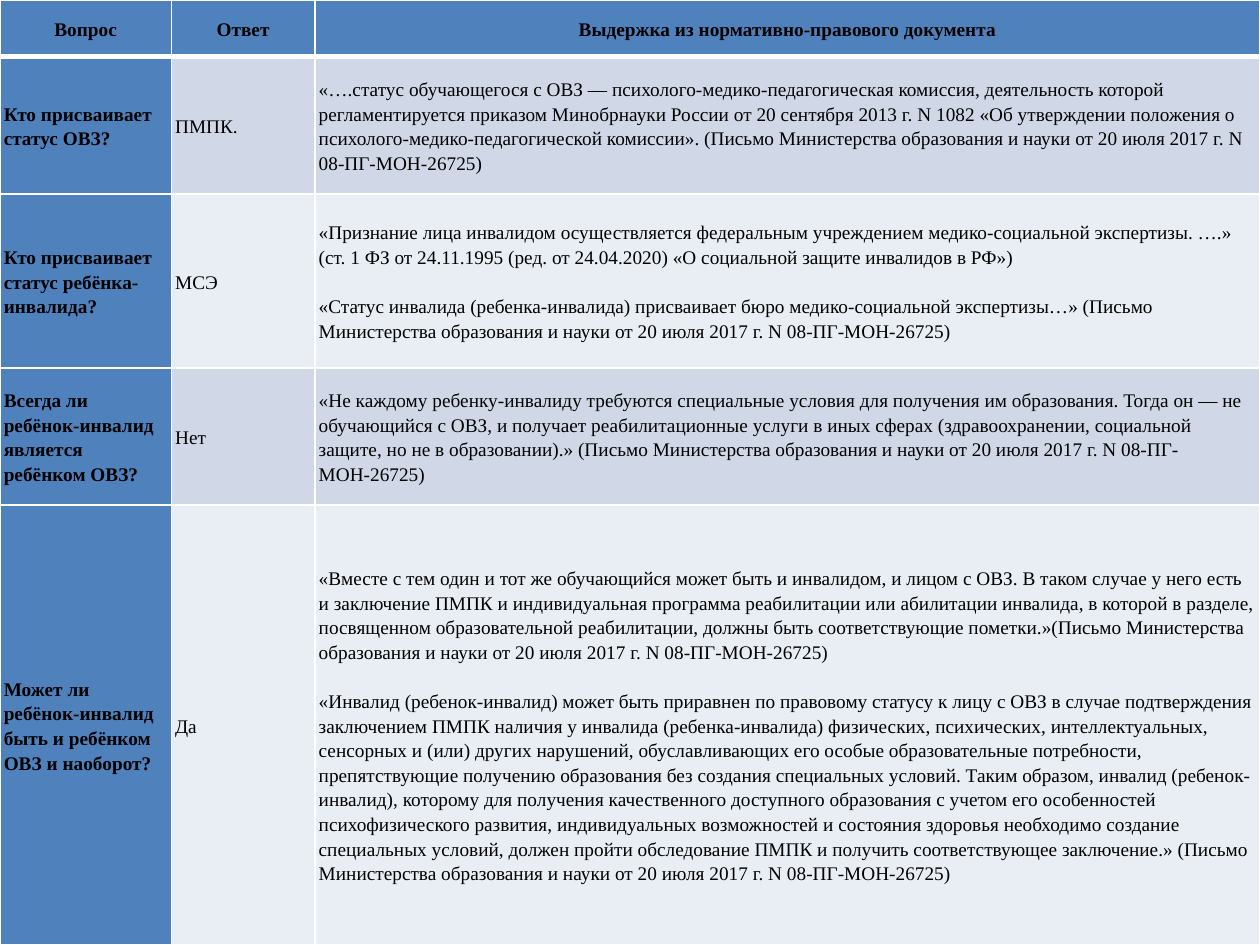
"""Build a slide with a table of questions and answers on the ОВЗ and disability statuses."""
from copy import deepcopy

from lxml.etree import SubElement
from pptx import Presentation
from pptx.dml.color import RGBColor as RGB
from pptx.enum.text import MSO_ANCHOR as Anchor, PP_ALIGN as Align
from pptx.oxml.ns import qn
from pptx.util import Inches, Pt

LETTER = "(Письмо Министерства образования и науки от 20 июля 2017 г. N 08-ПГ-МОН-26725)"
HEADINGS = ("Вопрос", "Ответ", "Выдержка из нормативно-правового документа")
QUESTIONS = [
    (
        "Кто присваивает статус ОВЗ?",
        "ПМПК.",
        "«….статус обучающегося с ОВЗ — психолого-медико-педагогическая комиссия, "
        "деятельность которой регламентируется приказом Минобрнауки России "
        "от 20 сентября 2013 г. N 1082 «Об утверждении положения о "
        f"психолого-медико-педагогической комиссии». {LETTER}",
    ),
    (
        "Кто присваивает статус ребёнка-инвалида?",
        "МСЭ",
        "«Признание лица инвалидом осуществляется федеральным учреждением "
        "медико-социальной экспертизы. ….» (ст. 1 ФЗ от 24.11.1995 "
        "(ред. от 24.04.2020) «О социальной защите инвалидов в РФ»)\n\n"
        "«Статус инвалида (ребенка-инвалида) присваивает бюро "
        f"медико-социальной экспертизы…» {LETTER}",
    ),
    (
        "Всегда ли ребёнок-инвалид является ребёнком ОВЗ?",
        "Нет",
        "«Не каждому ребенку-инвалиду требуются специальные условия для получения им "
        "образования. Тогда он — не обучающийся с ОВЗ, и получает реабилитационные "
        "услуги в иных сферах (здравоохранении, социальной защите, но не в "
        f"образовании).» {LETTER}",
    ),
    (
        "Может ли ребёнок-инвалид быть и ребёнком ОВЗ и наоборот?",
        "Да",
        "«Вместе с тем один и тот же обучающийся может быть и инвалидом, и лицом с ОВЗ. "
        "В таком случае у него есть и заключение ПМПК и индивидуальная программа "
        "реабилитации или абилитации инвалида, в которой в разделе, посвященном "
        "образовательной реабилитации, должны быть соответствующие пометки.»"
        f"{LETTER}\n\n"
        "«Инвалид (ребенок-инвалид) может быть приравнен по правовому статусу к лицу с "
        "ОВЗ в случае подтверждения заключением ПМПК наличия у инвалида "
        "(ребенка-инвалида) физических, психических, интеллектуальных, сенсорных и "
        "(или) других нарушений, обуславливающих его особые образовательные "
        "потребности, препятствующие получению образования без создания специальных "
        "условий. Таким образом, инвалид (ребенок-инвалид), которому для получения "
        "качественного доступного образования с учетом его особенностей "
        "психофизического развития, индивидуальных возможностей и состояния здоровья "
        "необходимо создание специальных условий, должен пройти обследование ПМПК и "
        f"получить соответствующее заключение.» {LETTER}",
    ),
]
COLUMN_WIDTHS = (1.36, 1.14, 7.5)
ROW_HEIGHTS = (0.45, 1.09, 1.38, 1.09, 3.49)
COLORS = {"heading": "4F81BD", "odd": "D0D8E8", "even": "E9EDF4",
          "border": "FFFFFF", "text": "000000"}
CELL_FORMAT = {"vertical_anchor": Anchor.MIDDLE} | {
    f"margin_{side}": Inches(0.03) for side in ("left", "right", "top", "bottom")}
PARAGRAPH_FORMAT = {"line_spacing": 1.15, "space_before": Pt(18), "space_after": Pt(18)}
FONT_FORMAT = {"name": "Times New Roman", "size": Pt(11)}


def apply(target, values):
    """Set every attribute listed in values."""
    for name, value in values.items():
        setattr(target, name, value)


def add_borders(cell, row):
    """Draw white cell borders, with a thick rule under the heading row."""
    widths = {"lnL": 1, "lnR": 1, "lnT": 3 if row == 1 else 1, "lnB": 3 if row == 0 else 1}
    for side, width in widths.items():
        line = SubElement(cell._tc.get_or_add_tcPr(), qn(f"a:{side}"), w=str(Pt(width)))
        fill = SubElement(line, qn("a:solidFill"))
        SubElement(fill, qn("a:srgbClr"), val=COLORS["border"])


def fill_cell(cell, text, row, column):
    """Write and style one table cell."""
    is_heading = row == 0 or column == 0
    band = "heading" if is_heading else "odd" if row % 2 else "even"
    apply(cell, CELL_FORMAT)
    add_borders(cell, row)
    cell.fill.solid()
    cell.fill.fore_color.rgb = RGB.from_string(COLORS[band])
    paragraph = cell.text_frame.paragraphs[0]
    paragraph.text = text
    apply(paragraph, PARAGRAPH_FORMAT)
    paragraph.alignment = Align.CENTER if row == 0 else Align.LEFT
    for run in paragraph.runs:
        apply(run.font, FONT_FORMAT | {"bold": is_heading})
        run.font.color.rgb = RGB.from_string(COLORS["text"])
    for line_break in paragraph._p.findall(qn("a:br")):
        line_break.append(deepcopy(paragraph.runs[0]._r.rPr))


def main():
    """Create the presentation and save it."""
    deck = Presentation()
    deck.slide_width, deck.slide_height = Inches(10), Inches(7.5)
    slide = deck.slides.add_slide(deck.slide_layouts[6])
    rows = [HEADINGS, *QUESTIONS]
    table = slide.shapes.add_table(len(rows), len(HEADINGS), 0, 0,
                                   deck.slide_width, deck.slide_height).table
    for column, width in zip(table.columns, COLUMN_WIDTHS):
        column.width = Inches(width)
    for table_row, height in zip(table.rows, ROW_HEIGHTS):
        table_row.height = Inches(height)
    for row, texts in enumerate(rows):
        for column, text in enumerate(texts):
            fill_cell(table.cell(row, column), text, row, column)
    deck.save("out.pptx")


if __name__ == "__main__":
    main()
